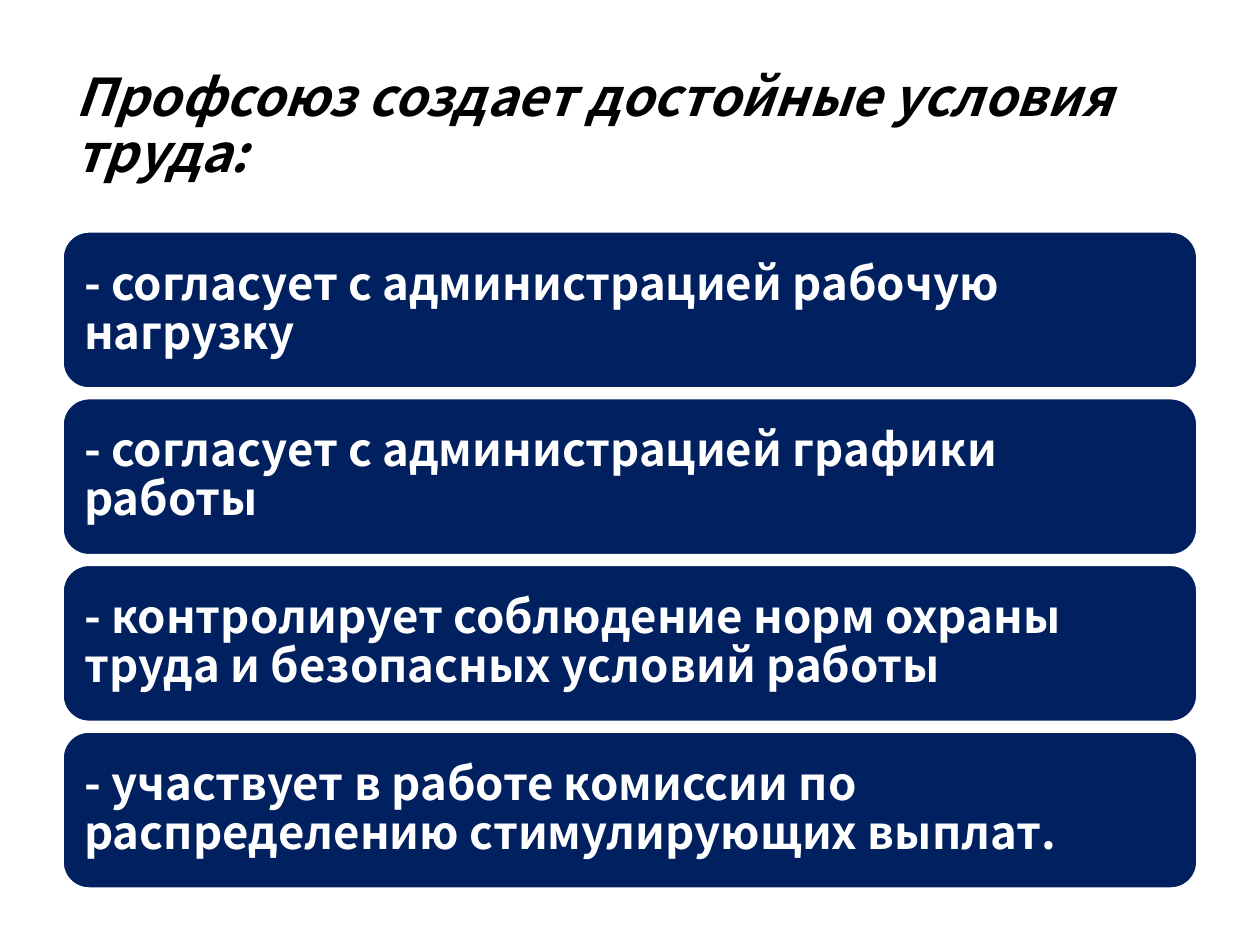
from pptx import Presentation
from pptx.dml.color import RGBColor
from pptx.enum import shapes, text
from pptx.util import Pt

FONT = "Noto Sans CJK SC"
NAVY, WHITE, BLACK = "002060", "FFFFFF", "000000"
TITLE = "Профсоюз создает достойные условия труда:"
DUTIES = [
    "- согласует с администрацией рабочую нагрузку",
    "- согласует с администрацией графики работы",
    "- контролирует соблюдение норм охраны труда и безопасных условий работы",
    "- участвует в работе комиссии по распределению стимулирующих выплат.",
]


def color(hex_value):
    return RGBColor.from_string(hex_value)


def set_attributes(target, values):
    for name, value in values.items():
        setattr(target, name, value)


def write_text(shape, content, hex_color, font_format, frame_format=None):
    frame = shape.text_frame
    set_attributes(frame, {
        "word_wrap": True,
        "vertical_anchor": text.MSO_ANCHOR.MIDDLE,
        **(frame_format or {}),
    })
    paragraph = frame.paragraphs[0]
    set_attributes(paragraph, {
        "text": content,
        "alignment": text.PP_ALIGN.LEFT,
        "line_spacing": 0.9,
    })
    set_attributes(paragraph.font, {"name": FONT, "bold": True, **font_format})
    paragraph.font.color.rgb = color(hex_color)
    return paragraph


def add_title(slide, left, top, width, height):
    box = slide.shapes.add_textbox(Pt(left), Pt(top), Pt(width), Pt(height))
    write_text(box, TITLE, BLACK, {"size": Pt(29.7), "italic": True})


def add_duty_cards(slide, left, top, width, height, gap=6):
    card_height = (height - gap * (len(DUTIES) - 1)) / len(DUTIES)
    margins = {f"margin_{side}": Pt(7.8) for side in ("left", "top", "right", "bottom")}
    for index, duty in enumerate(DUTIES):
        card_top = top + index * (card_height + gap)
        card = slide.shapes.add_shape(
            shapes.MSO_SHAPE.ROUNDED_RECTANGLE,
            Pt(left), Pt(card_top), Pt(width), Pt(card_height))
        card.shadow.inherit = False
        card.fill.solid()
        card.fill.fore_color.rgb = color(NAVY)
        card.line.color.rgb = color(WHITE)
        card.line.width = Pt(1)
        paragraph = write_text(card, duty, WHITE, {"size": Pt(26)}, margins)
        paragraph.space_after = Pt(9)


def main():
    presentation = Presentation()
    set_attributes(presentation, {"slide_width": Pt(720), "slide_height": Pt(540)})
    slide = presentation.slides.add_slide(presentation.slide_layouts[6])
    add_title(slide, 36, 28.8, 634.3, 87.8)
    add_duty_cards(slide, 36, 132.5, 648, 375)
    presentation.save("out.pptx")


if __name__ == "__main__":
    main()
